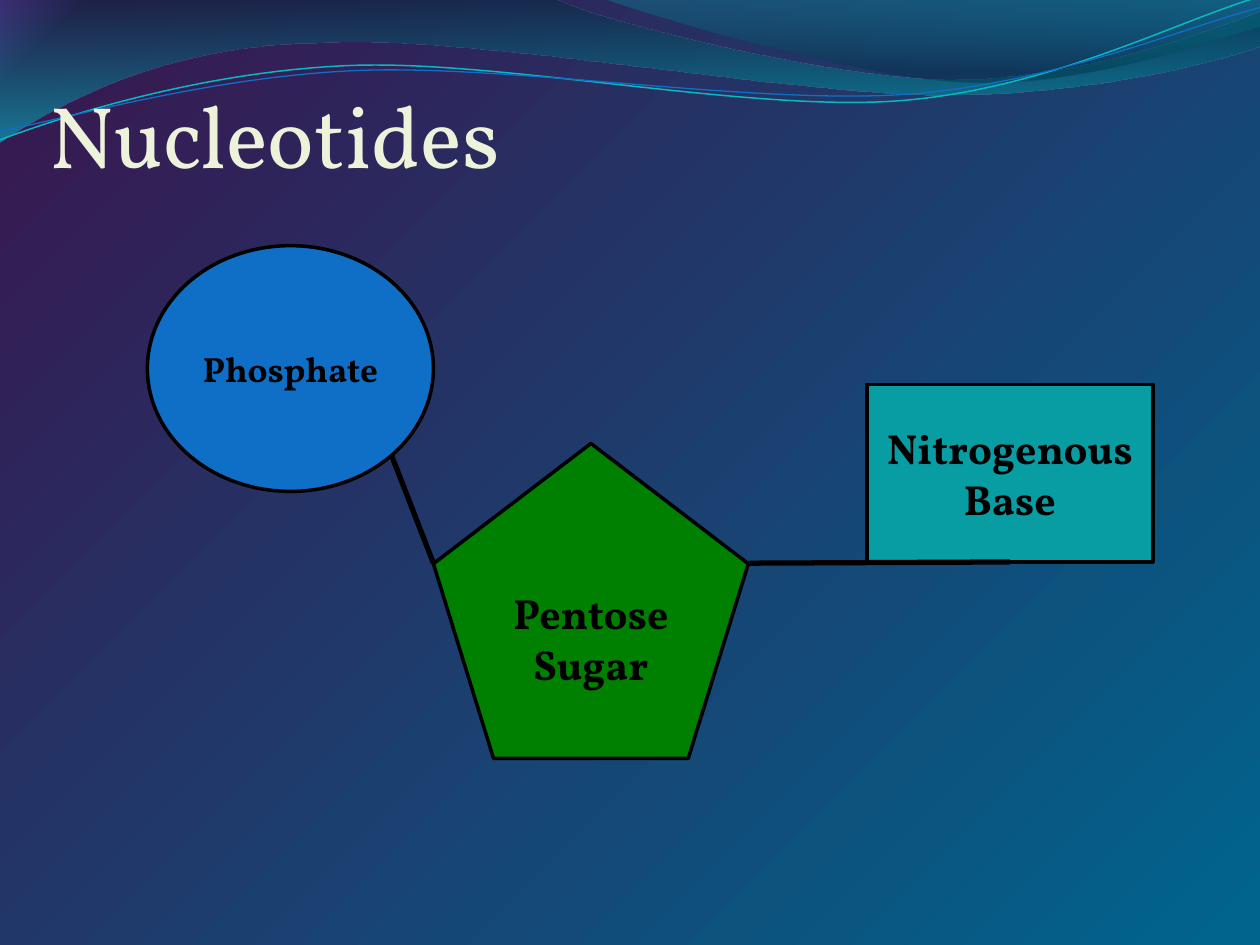
from collections import namedtuple
from math import cos, radians, sin, sqrt

from lxml import etree
from pptx import Presentation
from pptx.dml.color import RGBColor
from pptx.enum.shapes import MSO_CONNECTOR as Link, MSO_SHAPE as Preset
from pptx.enum.text import MSO_ANCHOR as Anchor, PP_ALIGN as Align
from pptx.oxml.ns import qn
from pptx.util import Inches, Pt

Box = namedtuple("Box", "left top width height")

SLIDE_WIDTH, SLIDE_HEIGHT = Inches(10), Inches(7.5)
COLUMNS, ROWS = 100, 75
FONT = "Vollkorn"
WAVE_TILT = 357.3
COLORS = {
    "violet": "7030A0", "plum": "381850", "ocean": "00648D",
    "navy": "002B3C", "aqua": "00C6CF", "lagoon": "00A1A9", "deep": "003347",
    "cyan": "0AB8BF", "blue": "0F6FC6", "green": "008000", "teal": "089CA3",
    "cream": "EDF3DB", "black": "000000",
}


def col(columns):
    return round(SLIDE_WIDTH * columns / COLUMNS)


def row(rows):
    return round(SLIDE_HEIGHT * rows / ROWS)


def rgb(color):
    return RGBColor.from_string(COLORS[color])


def place(box, left, top, width, height):
    return col(box.left + left), row(box.top + top), col(width), row(height)


def paint_gradient(fill, owner, stops, angle):
    fill.gradient()
    gradient = next(owner.iter(qn("a:gradFill")))
    stop_list = gradient.find(qn("a:gsLst"))
    for old_stop in list(stop_list):
        stop_list.remove(old_stop)
    for position, color, opacity in stops:
        stop = etree.SubElement(stop_list, qn("a:gs"), pos=str(position * 1000))
        tint = etree.SubElement(stop, qn("a:srgbClr"), val=COLORS[color])
        if opacity < 100:
            etree.SubElement(tint, qn("a:alpha"), val=str(opacity * 1000))
    direction = gradient.find(qn("a:lin"))
    direction.set("ang", str(angle * 60000))
    direction.set("scaled", "0")


def outline(line, color, width):
    line.color.rgb = rgb(color)
    line.width = Pt(width)


def write_lines(frame, lines, size, color, align, bold):
    frame.word_wrap = True
    for index, words in enumerate(lines):
        paragraph = frame.add_paragraph() if index else frame.paragraphs[0]
        paragraph.alignment = align
        run = paragraph.add_run()
        run.text = words
        run.font.name = FONT
        run.font.size = Pt(size)
        run.font.bold = bold
        run.font.color.rgb = rgb(color)


def turn(point, pivot, degrees):
    angle = radians(degrees)
    x, y = point[0] - pivot[0], point[1] - pivot[1]
    return (pivot[0] + x * cos(angle) - y * sin(angle),
            pivot[1] + x * sin(angle) + y * cos(angle))


def add_wave(slide, box, start, segments, closed):
    points = [start] + [point for segment in segments for point in segment]
    corners = [(col(box.left + x), row(box.top + y)) for x, y in points]
    builder = slide.shapes.build_freeform(*corners[0])
    builder.add_line_segments(corners[1:], close=closed)
    wave = builder.convert_to_shape()
    wave.shadow.inherit = False
    sides = wave.element.iter(qn("a:lnTo"))
    for segment, group in [(s, [next(sides) for _ in s]) for s in segments]:
        if len(segment) == 3:
            curve = etree.Element(qn("a:cubicBezTo"))
            group[0].addprevious(curve)
            for side in group:
                curve.append(side[0])
                side.getparent().remove(side)
    return wave


def add_header_waves(slide, box):
    bands = [
        ((0, -0.1),
         [[(44, -0.1)],
          [(47.6, 1.7), (66.4, 6.3), (75.8, 6.3)],
          [(85.3, 6.3), (95.8, 2.6), (100, 0.9)],
          [(100.1, 3.6)],
          [(98.3, 4.4), (87, 7.6), (74.6, 7.5)],
          [(62.2, 7.5), (38.2, 2.8), (25.7, 3.4)],
          [(12.9, 3.5), (4.6, 8.3), (-0.1, 11.3)]],
         [(0, "navy", 45), (100, "aqua", 55)]),
        ((47.9, -0.1),
         [[(50.9, 1.1), (68.2, 6.2), (76.9, 6.5)],
          [(85.6, 6.9), (96.1, 3.2), (100, 2.1)],
          [(100, 0)]],
         [(0, "lagoon", 30), (80, "deep", 45)]),
    ]
    for start, segments, stops in bands:
        band = add_wave(slide, box, start, segments, True)
        paint_gradient(band.fill, band.element, stops, 90)
        band.line.fill.background()

    strands = [
        ((0, 11.1),
         [[(4.8, 9.3), (15.8, 5.7), (27.7, 5.2)],
          [(39.5, 4.7), (59.3, 8.9), (71.3, 8)],
          [(83.3, 7.1), (93.8, 1.5), (99.8, -0.2)]],
         (49.9, 5.75), "cyan", 0.85),
        ((0, 10.4),
         [[(4.7, 9.6), (16.4, 6.1), (28.3, 5.6)],
          [(40.3, 5.1), (59.7, 8.3), (71.7, 7.5)],
          [(83.6, 6.7), (94.1, 2.1), (100, 0.6)]],
         (49.95, 5.9), "blue", 0.75),
    ]
    for start, segments, pivot, color, width in strands:
        level = [[turn(point, pivot, -WAVE_TILT) for point in segment]
                 for segment in segments]
        strand = add_wave(slide, box, turn(start, pivot, -WAVE_TILT), level, False)
        strand.fill.background()
        outline(strand.line, color, width)
        strand.rotation = WAVE_TILT


def add_title(slide, box):
    frame = slide.shapes.add_textbox(*place(box, 0, 0, box.width, box.height)).text_frame
    frame.vertical_anchor = Anchor.BOTTOM
    frame.margin_left = frame.margin_right = frame.margin_bottom = 0
    write_lines(frame, ["Nucleotides"], 50, "cream", Align.LEFT, False)


def add_nucleotide(slide, box):
    phosphate = Box(0, 0, 22.7, 19.5)
    sugar = Box(22.7, 15.7, 25, 25)
    base = Box(57.1, 11, 22.7, 14.1)
    parts = [
        (phosphate, Preset.OVAL, "blue", ["Phosphate"], 20),
        (sugar, Preset.REGULAR_PENTAGON, "green", ["Pentose", "Sugar"], 24),
        (base, Preset.RECTANGLE, "teal", ["Nitrogenous", "Base"], 24),
    ]
    for part, preset, color, lines, size in parts:
        shape = slide.shapes.add_shape(preset, *place(box, *part))
        shape.shadow.inherit = False
        shape.fill.solid()
        shape.fill.fore_color.rgb = rgb(color)
        outline(shape.line, "black", 2)
        shape.text_frame.vertical_anchor = Anchor.MIDDLE
        write_lines(shape.text_frame, lines, size, "black", Align.CENTER, True)

    diagonal = (1 + sqrt(0.5)) / 2
    shoulder = sugar.top + 0.38 * sugar.height
    bonds = [
        ((phosphate.width * diagonal, phosphate.height * diagonal), (sugar.left, shoulder)),
        ((sugar.left + sugar.width, shoulder),
         (base.left + base.width / 2, base.top + base.height)),
    ]
    for start, end in bonds:
        ends = [scale(offset + at) for x, y in (start, end)
                for scale, offset, at in ((col, box.left, x), (row, box.top, y))]
        bond = slide.shapes.add_connector(Link.STRAIGHT, *ends)
        outline(bond.line, "black", 3)
        etree.SubElement(bond.element.spPr, qn("a:effectLst"))


def main():
    deck = Presentation()
    deck.slide_width, deck.slide_height = SLIDE_WIDTH, SLIDE_HEIGHT
    slide = deck.slides.add_slide(deck.slide_layouts[6])
    paint_gradient(slide.background.fill, slide.element,
                   [(0, "violet", 100), (4, "plum", 100),
                    (99, "ocean", 100), (100, "ocean", 100)], 45)
    add_header_waves(slide, Box(0, 0, COLUMNS, 12))
    add_title(slide, Box(3.9, 2.3, 90, 12.5))
    add_nucleotide(slide, Box(11.7, 19.5, 79.8, 40.7))
    deck.save("out.pptx")


if __name__ == "__main__":
    main()
